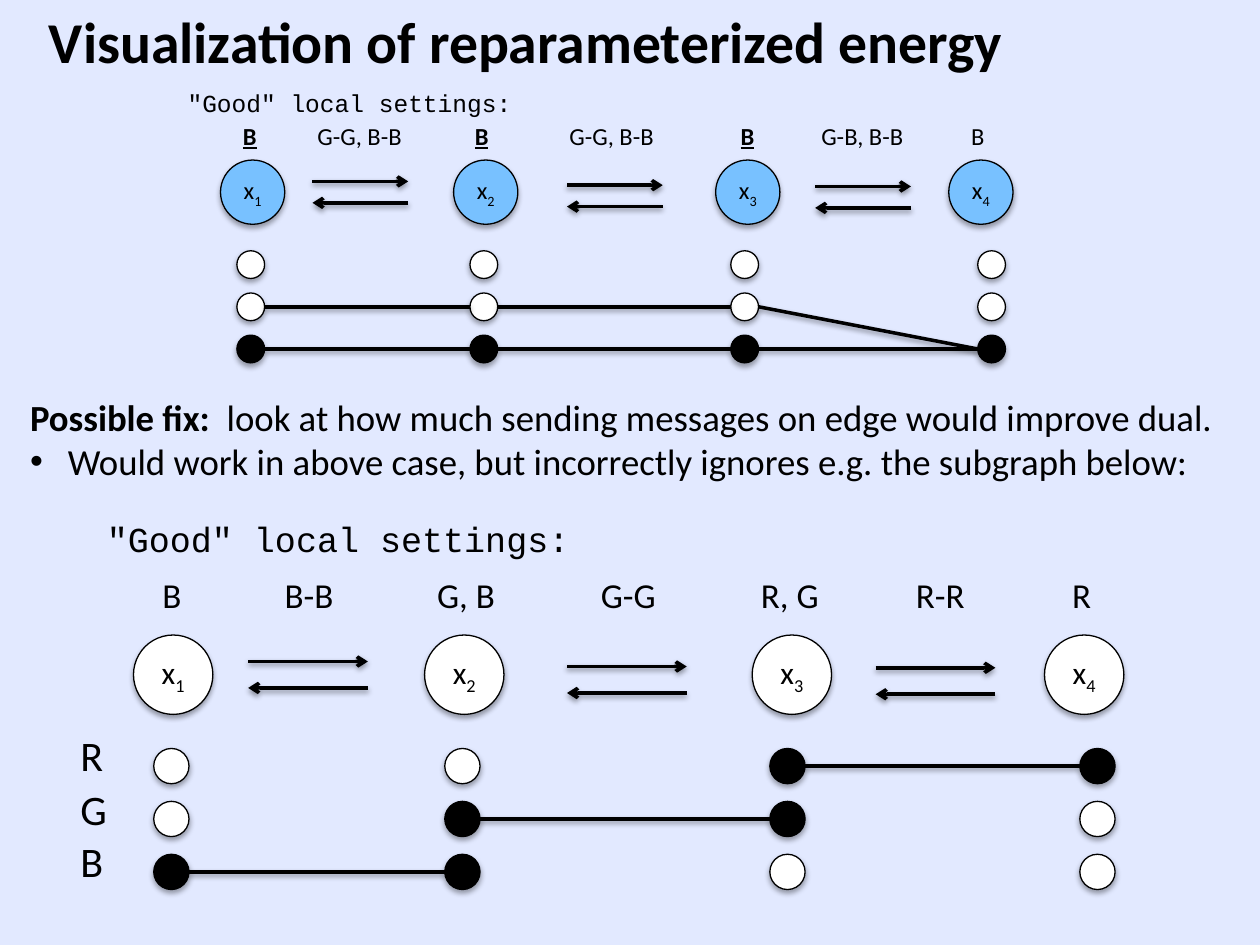
"""Build a slide comparing local settings on two chains of variables."""
from lxml import etree
from pptx import Presentation
from pptx.dml.color import RGBColor as RGB
from pptx.enum.shapes import MSO_CONNECTOR as CONN, MSO_SHAPE as SHAPE
from pptx.enum.text import MSO_ANCHOR as ANCHOR, MSO_AUTO_SIZE as AUTO, PP_ALIGN as ALIGN
from pptx.oxml import parse_xml
from pptx.oxml.ns import nsdecls, qn
from pptx.util import Inches, Pt

COLORS = {"back": "E2E9FF", "ink": "000000", "blue": "78C1FF", "white": "FFFFFF"}
SANS, MONO = "Calibri", "Courier New"

TITLE = ("Visualization of reparameterized energy", 0.29, 0, 7.86, 0.66)
FIX_BOX = (0.14, 3.08, 9.86, 0.81)
FIX_HEAD = "Possible fix:  "
FIX_TEXT = "look at how much sending messages on edge would improve dual."
FIX_BULLET = "Would work in above case, but incorrectly ignores e.g. the subgraph below:"
HEADING = '"Good" local settings:'

UPPER = {
    "heading": (1.39, 0.65, 2.79), "size": 14, "sub_size": 14, "text_h": 0.34, "wrap": False,
    "label_top": 0.91,
    "labels": [("B", 1.83, 0.31, True), ("G-G, B-B", 2.42, 0.88, False),
               ("B", 3.67, 0.31, True), ("G-G, B-B", 4.42, 0.88, False),
               ("B", 5.78, 0.31, True), ("G-B, B-B", 6.42, 0.86, False),
               ("B", 7.61, 0.31, False)],
    "nodes": [1.75, 3.6, 5.68, 7.53], "node_top": 1.27, "node_d": 0.51, "node_fill": "blue",
    "dots": [1.88, 3.73, 5.8, 7.76], "dot_top": 1.99, "dot_bottom": 2.66, "dot_d": 0.22,
    "filled": [{2}, {2}, {2}, {2}],
    "edges": [(0, 1, 1), (0, 2, 2), (1, 1, 1), (1, 2, 2), (2, 2, 2), (2, 1, 2)],
    "arrows": [(2.48, 1.44), (4.5, 1.47), (6.47, 1.48)], "arrow_w": 0.76, "arrow_gap": 0.17,
    "rows": [],
}
LOWER = {
    "heading": (0.75, 4.06, 7.9), "size": 20, "sub_size": 18, "text_h": 0.44, "wrap": True,
    "label_top": 4.5,
    "labels": [("B", 1.19, 0.48, False), ("B-B", 2.16, 0.65, False),
               ("G, B", 3.37, 0.71, False), ("G-G", 4.67, 0.67, False),
               ("R, G", 5.94, 0.81, False), ("R-R", 7.17, 0.63, False),
               ("R", 8.41, 0.51, False)],
    "nodes": [1.06, 3.37, 5.97, 8.29], "node_top": 5.04, "node_d": 0.63, "node_fill": "white",
    "dots": [1.22, 3.53, 6.11, 8.57], "dot_top": 5.94, "dot_bottom": 6.78, "dot_d": 0.28,
    "filled": [{2}, {1, 2}, {0, 1}, {0}],
    "edges": [(0, 2, 2), (1, 1, 1), (2, 0, 0)],
    "arrows": [(1.97, 5.25), (4.5, 5.29), (6.95, 5.3)], "arrow_w": 0.95, "arrow_gap": 0.21,
    "rows": [("R", 5.74, 0.38), ("G", 6.17, 0.41), ("B", 6.58, 0.39)],
}


def color(name):
    return RGB.from_string(COLORS[name])


def write(p, text, *, size, font=SANS, bold=False, underline=False, base=0):
    r = p.add_run()
    r.text = text
    r.font.size, r.font.name = Pt(size), font
    r.font.bold, r.font.underline = bold, underline
    r.font.color.rgb = color("ink")
    if base:
        r._r.get_or_add_rPr().set("baseline", str(base * 1000))


def add_box(shapes, x, y, w, h, wrap=False):
    tf = shapes.add_textbox(*map(Inches, (x, y, w, h))).text_frame
    tf.word_wrap = wrap
    tf.auto_size = AUTO.SHAPE_TO_FIT_TEXT
    return tf


def add_shadow(sp, alpha, dist):
    sp.element.spPr.append(parse_xml(
        f'<a:effectLst {nsdecls("a")}><a:outerShdw blurRad="{Pt(3.1)}" dist="{Pt(dist)}" '
        f'dir="5400000" rotWithShape="0"><a:srgbClr val="{COLORS["ink"]}">'
        f'<a:alpha val="{alpha * 1000}"/></a:srgbClr></a:outerShdw></a:effectLst>'))


def add_circle(shapes, x, y, d, fill):
    sp = shapes.add_shape(SHAPE.OVAL, *map(Inches, (x, y, d, d)))
    sp.fill.solid()
    sp.fill.fore_color.rgb = color(fill)
    sp.line.color.rgb = color("ink")
    sp.line.width = Pt(0.75)
    add_shadow(sp, 35, 1.8)
    return sp


def add_line(shapes, x1, y1, x2, y2, arrow=False):
    c = shapes.add_connector(CONN.STRAIGHT, *map(Inches, (x1, y1, x2, y2)))
    c.line.color.rgb = color("ink")
    c.line.width = Pt(2)
    if arrow:
        etree.SubElement(c.element.spPr.find(qn("a:ln")), qn("a:tailEnd"), type="arrow")
    add_shadow(c, 38, 1.6)


def add_node(shapes, x, y, d, fill, number, size):
    tf = add_circle(shapes, x, y, d, fill).text_frame
    tf.margin_left = tf.margin_right = tf.margin_top = tf.margin_bottom = 0
    tf.word_wrap = False
    tf.vertical_anchor = ANCHOR.MIDDLE
    p = tf.paragraphs[0]
    p.alignment = ALIGN.CENTER
    write(p, "x", size=size)
    write(p, str(number), size=size, base=-25)


def add_chain(shapes, c):
    d, dots = c["dot_d"], c["dots"]
    pitch = (c["dot_bottom"] - c["dot_top"]) / 2
    tops = [c["dot_top"] + row * pitch for row in range(3)]
    for i, x in enumerate(c["nodes"], 1):
        add_node(shapes, x, c["node_top"], c["node_d"], c["node_fill"], i, c["sub_size"])
    for x, filled in zip(dots, c["filled"]):
        for row, y in enumerate(tops):
            add_circle(shapes, x, y, d, "ink" if row in filled else "white")
    for col, start, end in c["edges"]:
        add_line(shapes, dots[col] + d, tops[start] + d / 2, dots[col + 1], tops[end] + d / 2)
    for x, y in c["arrows"]:
        right, below = x + c["arrow_w"], y + c["arrow_gap"]
        add_line(shapes, x, y, right, y, arrow=True)
        add_line(shapes, right, below, x, below, arrow=True)
    for text, x, w, strong in c["labels"]:
        tf = add_box(shapes, x, c["label_top"], w, c["text_h"], c["wrap"])
        write(tf.paragraphs[0], text, size=c["size"], bold=strong, underline=strong)
    tf = add_box(shapes, *c["heading"], c["text_h"], c["wrap"])
    write(tf.paragraphs[0], HEADING, size=c["size"], font=MONO)
    for text, y, w in c["rows"]:
        write(add_box(shapes, 0.54, y, w, 0.5).paragraphs[0], text, size=24)


def add_fix(shapes):
    tf = add_box(shapes, *FIX_BOX)
    p = tf.paragraphs[0]
    write(p, FIX_HEAD, size=21, bold=True)
    write(p, FIX_TEXT, size=21)
    p = tf.add_paragraph()
    write(p, FIX_BULLET, size=21)
    pPr = p._p.get_or_add_pPr()
    pPr.set("marL", str(Inches(0.3)))
    pPr.set("indent", str(-Inches(0.3)))
    etree.SubElement(pPr, qn("a:buFont"), typeface="Arial")
    etree.SubElement(pPr, qn("a:buChar"), char="•")


def main():
    prs = Presentation()
    prs.slide_width, prs.slide_height = Inches(10), Inches(7.5)
    s = prs.slides.add_slide(prs.slide_layouts[6])
    s.background.fill.solid()
    s.background.fill.fore_color.rgb = color("back")
    add_chain(s.shapes, UPPER)
    add_fix(s.shapes)
    add_chain(s.shapes.add_group_shape().shapes, LOWER)
    title, *place = TITLE
    write(add_box(s.shapes, *place).paragraphs[0], title, size=33, bold=True)
    prs.save("out.pptx")


if __name__ == "__main__":
    main()
